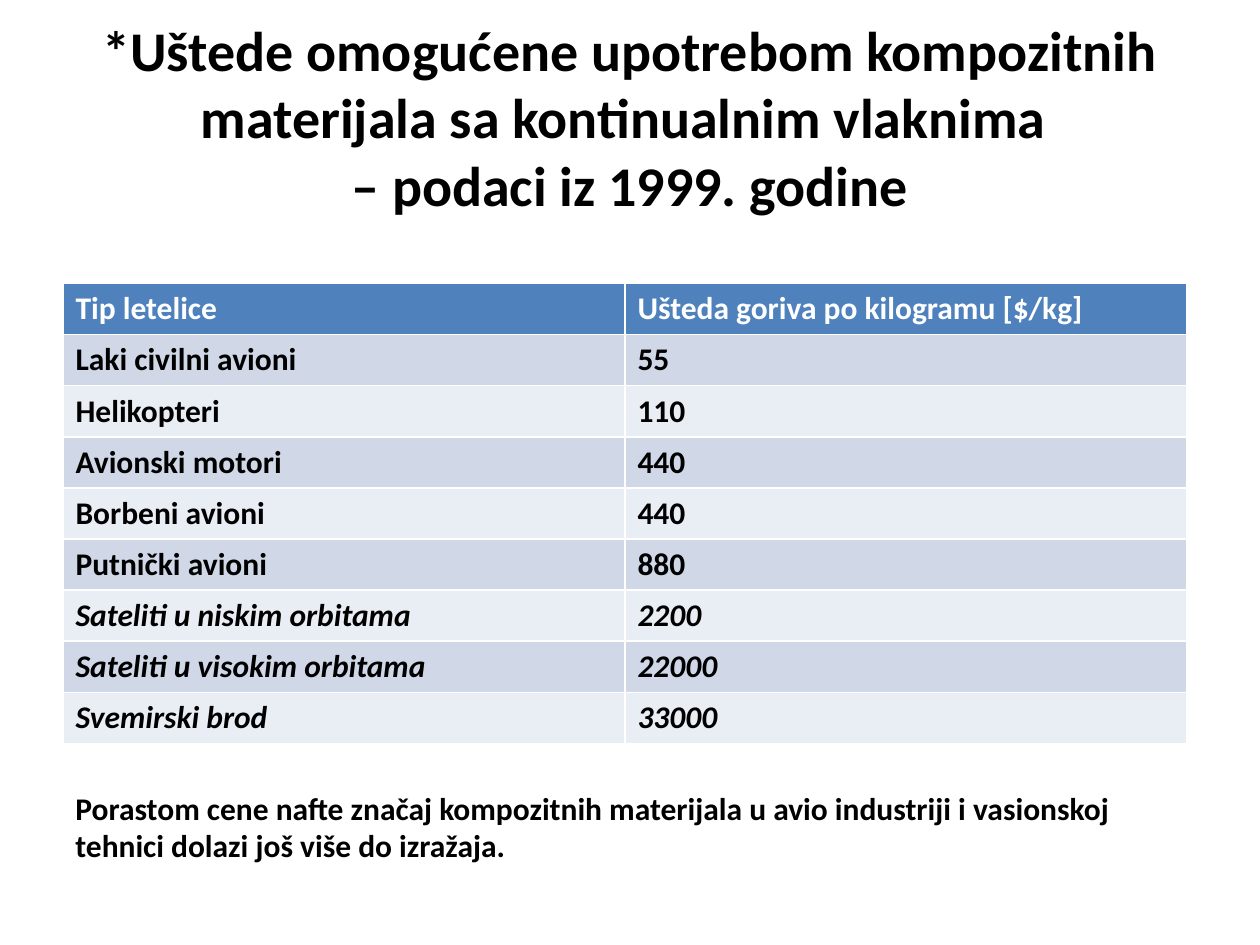
from pptx import Presentation
from pptx.dml.color import RGBColor
from pptx.enum import text
from pptx.util import Inches, Pt

BLACK = RGBColor(0x00, 0x00, 0x00)
WHITE = RGBColor(0xFF, 0xFF, 0xFF)
HEADER_BLUE = RGBColor(0x4F, 0x81, 0xBD)
BAND_DARK = RGBColor(0xD0, 0xD8, 0xE8)
BAND_LIGHT = RGBColor(0xE9, 0xED, 0xF4)

TITLE = ("*Uštede omogućene upotrebom kompozitnih materijala "
         "sa kontinualnim vlaknima \v– podaci iz 1999. godine")
HEADERS = ("Tip letelice", "Ušteda goriva po kilogramu [$/kg]")
AIRCRAFT = [
    ("Laki civilni avioni", "55"),
    ("Helikopteri", "110"),
    ("Avionski motori", "440"),
    ("Borbeni avioni", "440"),
    ("Putnički avioni", "880"),
]
SPACECRAFT = [
    ("Sateliti u niskim orbitama", "2200"),
    ("Sateliti u visokim orbitama", "22000"),
    ("Svemirski brod", "33000"),
]
CONCLUSION = ("Porastom cene nafte značaj kompozitnih materijala u avio industriji "
              "i vasionskoj tehnici dolazi još više do izražaja.")


def format_runs(text_frame, size, color=BLACK, italic=None):
    for paragraph in text_frame.paragraphs:
        for run in paragraph.runs:
            run.font.name = "Calibri"
            run.font.size = Pt(size)
            run.font.bold = True
            run.font.italic = italic
            run.font.color.rgb = color


def place_title(slide, left, top, width, height):
    title = slide.shapes.title
    title.left, title.top, title.width, title.height = left, top, width, height
    text_frame = title.text_frame
    text_frame.text = TITLE
    text_frame.auto_size = text.MSO_AUTO_SIZE.NONE
    text_frame.vertical_anchor = text.MSO_ANCHOR.MIDDLE
    text_frame.paragraphs[0].alignment = text.PP_ALIGN.CENTER
    format_runs(text_frame, 32)


def add_savings_table(slide, left, top, width, height):
    rows = [HEADERS] + AIRCRAFT + SPACECRAFT
    table = slide.shapes.add_table(
        len(rows), len(HEADERS), left, top, width, height).table
    for row_index, values in enumerate(rows):
        if row_index == 0:
            fill, color = HEADER_BLUE, WHITE
        else:
            fill, color = (BAND_DARK if row_index % 2 else BAND_LIGHT), BLACK
        italic = True if values in SPACECRAFT else None
        for cell, value in zip(table.rows[row_index].cells, values):
            cell.fill.solid()
            cell.fill.fore_color.rgb = fill
            cell.text_frame.text = value
            format_runs(cell.text_frame, 18, color, italic)


def add_conclusion(slide, left, top, width, height):
    text_frame = slide.shapes.add_textbox(left, top, width, height).text_frame
    text_frame.word_wrap = True
    text_frame.auto_size = text.MSO_AUTO_SIZE.SHAPE_TO_FIT_TEXT
    text_frame.text = CONCLUSION
    format_runs(text_frame, 18)


def main():
    presentation = Presentation()
    presentation.slide_width = Inches(10)
    presentation.slide_height = Inches(7.5)
    title_only = presentation.slide_layouts.get_by_name("Title Only")
    slide = presentation.slides.add_slide(title_only)
    left, content_width = Inches(0.5), Inches(8.92)
    place_title(slide, left, Inches(0.3), Inches(9), Inches(1.25))
    add_savings_table(slide, left, Inches(2.25), content_width, Inches(3.65))
    add_conclusion(slide, left, Inches(6.21), content_width, Inches(0.71))
    presentation.save("out.pptx")


if __name__ == "__main__":
    main()
